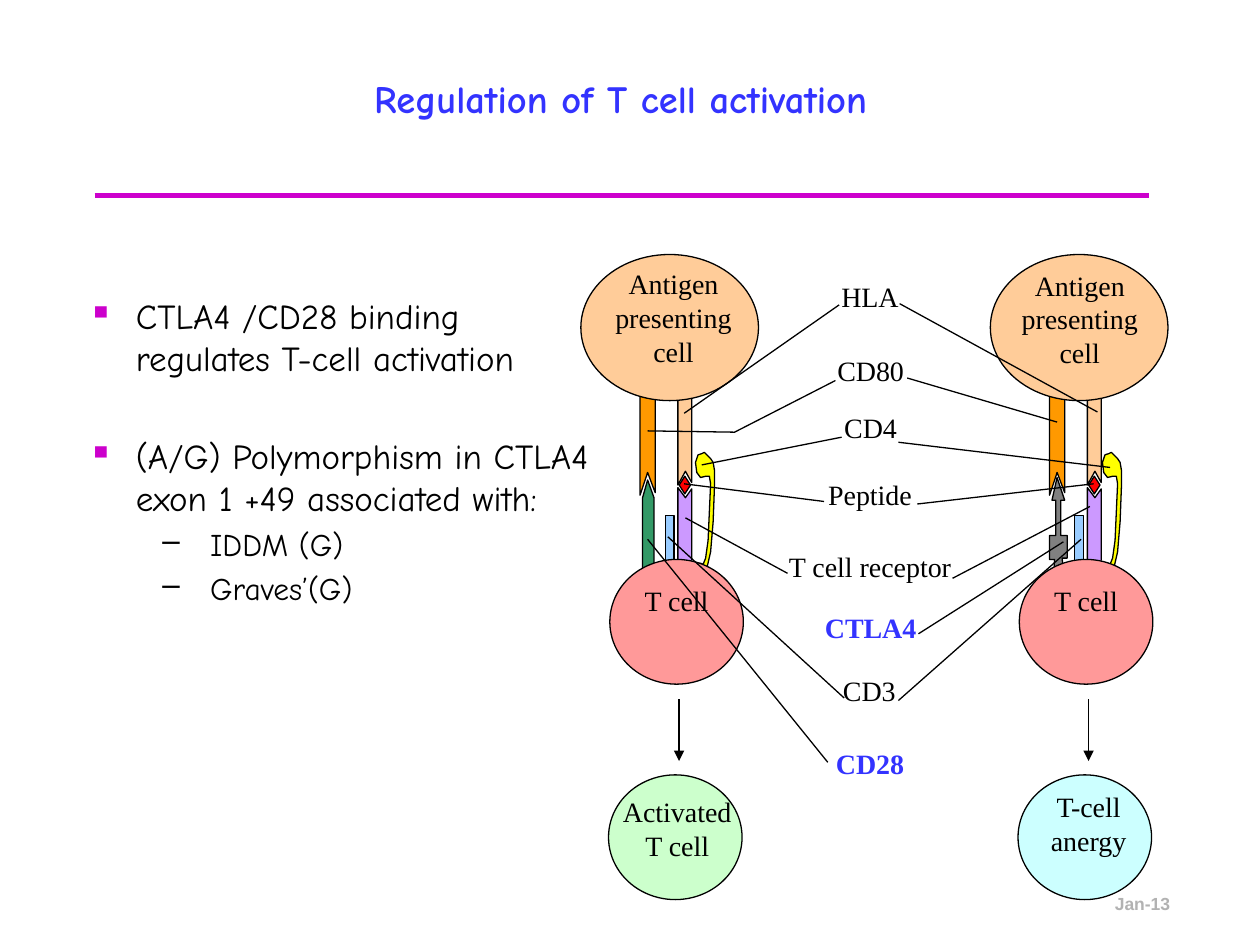
from lxml import etree
from pptx import Presentation
from pptx.dml.color import RGBColor
from pptx.enum.shapes import MSO_CONNECTOR, MSO_SHAPE
from pptx.enum.text import MSO_ANCHOR, PP_ALIGN
from pptx.oxml.ns import qn
from pptx.util import Inches, Pt

LINE = MSO_CONNECTOR.STRAIGHT
OVAL, RECT, DECISION = MSO_SHAPE.OVAL, MSO_SHAPE.RECTANGLE, MSO_SHAPE.FLOWCHART_DECISION
TOP, MIDDLE = MSO_ANCHOR.TOP, MSO_ANCHOR.MIDDLE
LEFT, CENTER = PP_ALIGN.LEFT, PP_ALIGN.CENTER

BLACK, BLUE, MAGENTA = "000000", "3333FF", "CC00CC"
DX = 3.25  # distance from the activated pathway to the anergy pathway

LABEL = {"name": "Times New Roman", "size": Pt(16)}
TITLE = {"name": "Comic Neue", "size": Pt(22), "bold": True}
DATE = {"name": "Arial", "size": Pt(10), "bold": True}

# Outlines for the left pathway
HLA = [(5.38, 3.1), (5.38, 3.85), (5.44, 3.74), (5.49, 3.83), (5.49, 3.11)]
RECEPTOR = [(5.38, 4.46), (5.38, 3.87), (5.44, 3.95), (5.49, 3.88), (5.49, 4.45)]
CD80 = [(5.08, 3.01), (5.08, 3.93), (5.14, 3.75), (5.2, 3.91), (5.2, 3.06)]
CD28 = [(5.19, 4.57), (5.19, 3.95), (5.14, 3.81), (5.1, 3.95), (5.1, 4.64)]
CD4 = [(5.54, 3.61), (5.57, 3.6), (5.59, 3.59), (5.61, 3.61), (5.64, 3.64),
       (5.66, 3.67), (5.67, 3.73), (5.67, 3.87), (5.66, 4.14), (5.64, 4.38),
       (5.61, 4.51), (5.57, 4.56), (5.53, 4.57), (5.49, 4.56), (5.48, 4.51),
       (5.49, 4.49), (5.51, 4.47), (5.56, 4.47), (5.58, 4.48), (5.6, 4.43),
       (5.62, 4.29), (5.63, 4.06), (5.64, 3.84), (5.63, 3.78), (5.6, 3.78),
       (5.56, 3.79), (5.53, 3.75), (5.52, 3.67)]
# Outline for the right pathway only
CTLA4 = [(8.36, 4.63), (8.37, 4.44), (8.33, 4.44), (8.33, 4.25), (8.38, 4.25),
         (8.38, 3.97), (8.35, 3.97), (8.39, 3.79), (8.45, 3.97), (8.42, 3.97),
         (8.42, 4.25), (8.47, 4.25), (8.47, 4.43), (8.43, 4.43), (8.45, 4.62)]
CD80_LEADER = [(5.14, 3.42), (5.83, 3.43), (6.63, 3.02)]

# Text, box, colour
LABELS = [
    ("Activated T cell", (4.84, 6.26, 1.07, 0.72), BLACK),
    ("T-cell\nanergy", (7.94, 6.22, 1.4, 0.71), BLACK),
    ("Antigen presenting cell", (4.75, 2.07, 1.19, 1.1), BLACK),
    ("Antigen presenting cell", (8, 2.08, 1.14, 0.99), BLACK),
    ("HLA", (6.47, 2.17, 0.87, 0.64), BLACK),
    ("CD80", (6.44, 2.76, 0.94, 0.49), BLACK),
    ("CD4", (6.43, 3.21, 0.96, 0.56), BLACK),
    ("Peptide", (6.2, 3.74, 1.41, 0.61), BLACK),
    ("T cell receptor", (5.95, 4.31, 1.91, 0.52), BLACK),
    ("CTLA4", (6.42, 4.8, 0.98, 0.55), BLUE),
    ("CD3", (6.53, 5.3, 0.74, 0.5), BLACK),
    ("CD28", (6.5, 5.88, 0.81, 0.53), BLUE),
]

LEADERS = [
    (6.66, 2.42, 5.43, 3.28), (7.14, 2.41, 8.71, 3.27),  # HLA
    (7.2, 3, 8.39, 3.35),                                # CD80
    (6.68, 3.47, 5.57, 3.69), (7.13, 3.51, 8.81, 3.71),  # CD4
    (6.54, 3.98, 5.43, 3.84), (7.28, 4, 8.68, 3.84),     # Peptide
    (6.25, 4.55, 5.44, 4.11), (7.56, 4.59, 8.65, 4.02),  # T cell receptor
    (7.29, 5.03, 8.44, 4.3),                             # CTLA4
    (6.7, 5.54, 5.3, 4.26), (7.13, 5.56, 8.58, 4.28),    # CD3
    (6.57, 6.05, 5.14, 4.28),                            # CD28
]

# Text, level, space before in points
BULLETS = [
    ("CTLA4 /CD28 binding regulates T-cell activation", 0, 4),
    ("(A/G) Polymorphism in CTLA4 exon 1 +49 associated with:", 0, 32),
    ("IDDM (G)", 1, 3.6),
    ("Graves’(G)", 1, 3.6),
]
# Size, left margin, hanging indent, bullet, bullet colour
LEVELS = [(20, 0.38, -0.38, "▪", MAGENTA), (18, 0.97, -0.38, "–", BLACK)]


def rgb(color):
    return RGBColor.from_string(color)


def add_run(p, text, color, font):
    r = p.add_run()
    r.text = text
    r.font.color.rgb = rgb(color)
    for key, value in font.items():
        setattr(r.font, key, value)


def write(tf, text, color, font, align=CENTER, anchor=TOP, wrap=True):
    tf.word_wrap, tf.vertical_anchor = wrap, anchor
    for i, line in enumerate(text.split("\n")):
        p = tf.add_paragraph() if i else tf.paragraphs[0]
        p.alignment = align
        add_run(p, line, color, font)


def add_text(s, text, box, color, font, **layout):
    sp = s.shapes.add_textbox(*map(Inches, box))
    write(sp.text_frame, text, color, font, **layout)


def style(sp, fill):
    sp.shadow.inherit = False
    if fill:
        sp.fill.solid()
        sp.fill.fore_color.rgb = rgb(fill)
    else:
        sp.fill.background()
    sp.line.color.rgb = rgb(BLACK)
    sp.line.width = Pt(0.75)


def add_preset(s, kind, box, fill):
    sp = s.shapes.add_shape(kind, *map(Inches, box))
    style(sp, fill)
    return sp


def add_outline(s, points, fill=None, dx=0, close=False):
    points = [(Inches(x + dx), Inches(y)) for x, y in points]
    builder = s.shapes.build_freeform(*points[0])
    builder.add_line_segments(points[1:], close=close)
    style(builder.convert_to_shape(), fill)


def add_line(s, ends, color=BLACK, width=0.75, arrow=False):
    line = s.shapes.add_connector(LINE, *map(Inches, ends))
    line.line.color.rgb = rgb(color)
    line.line.width = Pt(width)
    if arrow:
        etree.SubElement(line.line._get_or_add_ln(), qn("a:tailEnd"), type="triangle")
    etree.SubElement(line._element.spPr, qn("a:effectLst"))


def add_bullets(s, box):
    tf = s.shapes.add_textbox(*map(Inches, box)).text_frame
    tf.word_wrap = True
    for i, (text, level, before) in enumerate(BULLETS):
        size, margin, indent, char, color = LEVELS[level]
        p = tf.add_paragraph() if i else tf.paragraphs[0]
        p.level, p.space_before = level, Pt(before)
        pPr = p._p.get_or_add_pPr()
        pPr.set("marL", str(Inches(margin)))
        pPr.set("indent", str(Inches(indent)))
        clr = etree.SubElement(pPr, qn("a:buClr"))
        etree.SubElement(clr, qn("a:srgbClr"), val=color)
        etree.SubElement(pPr, qn("a:buChar"), char=char)
        add_run(p, text, BLACK, {"name": "Comic Neue", "size": Pt(size)})


def add_pathway(s, dx, result_fill):
    # Surface molecules
    add_outline(s, CD4, "FFFF00", dx and dx - 0.02, close=True)
    if dx:
        add_outline(s, CTLA4, "808080", close=True)
    else:
        add_outline(s, CD28, "339966")
    for points, fill in ((HLA, "FFCC99"), (RECEPTOR, "CC99FF"), (CD80, "FF9900")):
        add_outline(s, points, fill, dx)
    add_preset(s, RECT, (5.28 + dx, 4.09, 0.07, 0.44), "99CCFF")
    add_preset(s, DECISION, (5.39 + dx, 3.78, 0.09, 0.14), "FF0000")
    # Cells
    t_cell = add_preset(s, OVAL, (4.84 + dx, 4.44, 1.06, 0.99), "FF9999")
    write(t_cell.text_frame, "T cell", BLACK, LABEL, wrap=False)
    add_preset(s, OVAL, (4.61 + dx, 2.02, 1.41, 1.16), "FFCC99")
    add_preset(s, OVAL, (4.83 + dx, 6.15, 1.06, 0.99), result_fill)
    add_line(s, (5.39 + dx, 5.55, 5.39 + dx, 6.04), arrow=True)


def main():
    prs = Presentation()
    prs.slide_width, prs.slide_height = Inches(10), Inches(7.5)
    s = prs.slides.add_slide(prs.slide_layouts[6])

    # Title, rule, date and bullets
    add_line(s, (0.75, 1.55, 9.12, 1.55), MAGENTA, 3)
    add_text(s, "Jan-13", (8.75, 6.92, 1.17, 0.5), "B2B2B2", DATE,
             align=LEFT, anchor=MIDDLE, wrap=False)
    add_text(s, "Regulation of T cell activation", (0.83, 0.28, 8.19, 1), BLUE, TITLE,
             anchor=MIDDLE)
    add_bullets(s, (0.6, 2.29, 4.17, 4.5))

    # Diagram
    add_pathway(s, 0, "CCFFCC")
    add_pathway(s, DX, "CCFFFF")
    for text, box, color in LABELS:
        add_text(s, text, box, color, {**LABEL, "bold": color == BLUE})
    for ends in LEADERS:
        add_line(s, ends)
    add_outline(s, CD80_LEADER)
    prs.save("out.pptx")


if __name__ == "__main__":
    main()
